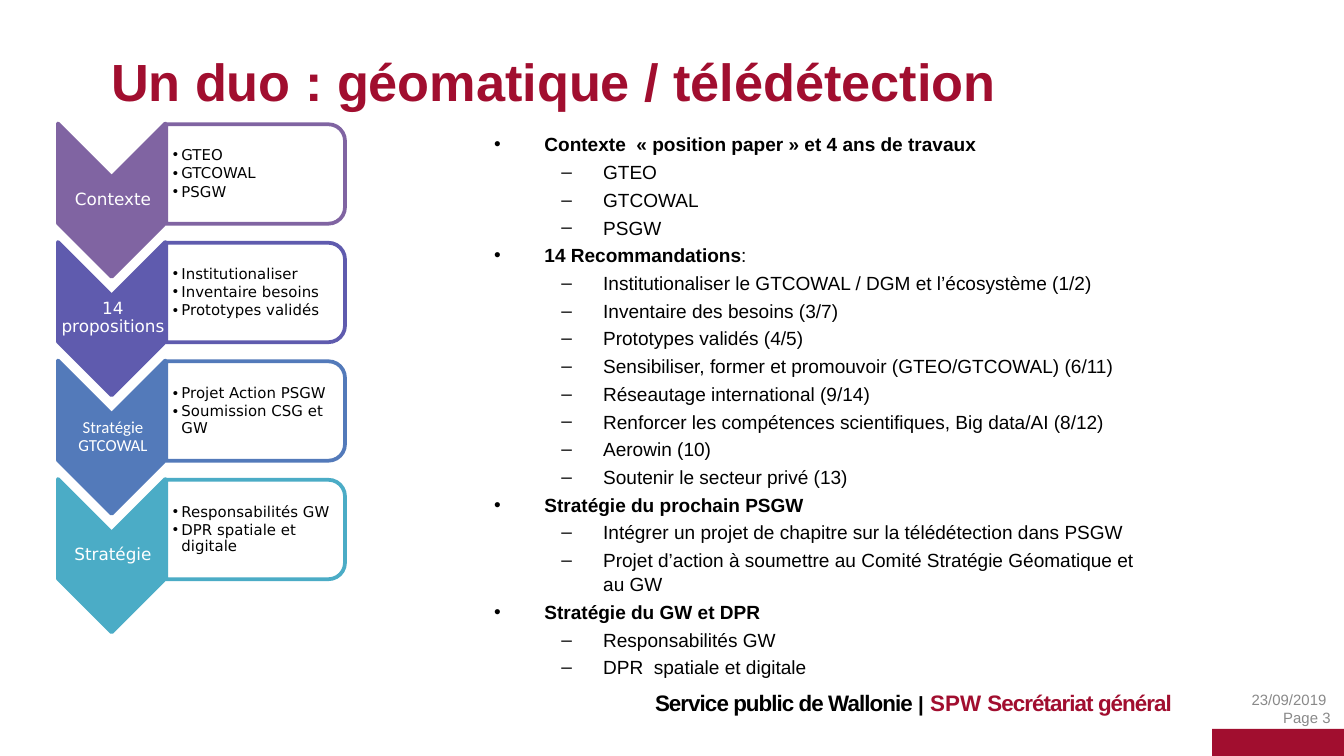
from lxml import etree
from pptx import Presentation
from pptx.dml.color import RGBColor
from pptx.enum.shapes import MSO_SHAPE
from pptx.enum.text import MSO_ANCHOR, PP_ALIGN
from pptx.oxml.ns import qn
from pptx.util import Cm, Pt

CHEVRON = MSO_SHAPE.CHEVRON
ROUND_TOP = MSO_SHAPE.ROUND_2_SAME_RECTANGLE
RECT = MSO_SHAPE.RECTANGLE
TOP, MIDDLE = MSO_ANCHOR.TOP, MSO_ANCHOR.MIDDLE
LEFT, CENTER, RIGHT = PP_ALIGN.LEFT, PP_ALIGN.CENTER, PP_ALIGN.RIGHT

COLORS = {
    "red": "A10E2F",
    "black": "000000",
    "white": "FFFFFF",
    "grey": "898989",
    "purple": "8064A2",
    "indigo": "5F5BAE",
    "blue": "537ABA",
    "teal": "4BACC6",
}

STEP_PITCH = 2.24
STEPS = [
    ("Contexte", "DejaVu Sans", "purple", ["GTEO", "GTCOWAL", "PSGW"]),
    ("14 propositions", "DejaVu Sans", "indigo",
     ["Institutionaliser", "Inventaire besoins", "Prototypes validés"]),
    ("Stratégie GTCOWAL", "Calibri", "blue",
     ["Projet Action PSGW", "Soumission CSG et GW"]),
    ("Stratégie", "DejaVu Sans", "teal",
     ["Responsabilités GW", "DPR spatiale et digitale"]),
]

OUTLINE = [
    ("Contexte  « position paper » et 4 ans de travaux", "",
     ["GTEO", "GTCOWAL", "PSGW"]),
    ("14 Recommandations", ":",
     ["Institutionaliser le GTCOWAL / DGM et l’écosystème (1/2)",
      "Inventaire des besoins (3/7)",
      "Prototypes validés (4/5)",
      "Sensibiliser, former et promouvoir (GTEO/GTCOWAL) (6/11)",
      "Réseautage international (9/14)",
      "Renforcer les compétences scientifiques, Big data/AI (8/12)",
      "Aerowin (10)",
      "Soutenir le secteur privé (13)"]),
    ("Stratégie du prochain PSGW", "",
     ["Intégrer un projet de chapitre sur la télédétection dans PSGW",
      "Projet d’action à soumettre au Comité Stratégie Géomatique et au GW"]),
    ("Stratégie du GW et DPR", "",
     ["Responsabilités GW", "DPR  spatiale et digitale"]),
]

FOOTER = [
    ("Service public de Wallonie ", 12, "black", -50),
    ("|", 11, "black", 0),
    (" ", 12, "black", 0),
    ("SPW ", 12, "red", 0),
    ("Secrétariat général", 12, "red", -50),
]


def rgb(name):
    return RGBColor.from_string(COLORS[name])


def add_box(s, x, y, w, h, anchor=TOP, insets=(0.25, 0.13, 0.25, 0.13)):
    tf = s.shapes.add_textbox(Cm(x), Cm(y), Cm(w), Cm(h)).text_frame
    tf.word_wrap = True
    tf.vertical_anchor = anchor
    tf.margin_left, tf.margin_top, tf.margin_right, tf.margin_bottom = map(Cm, insets)
    return tf


def add_paragraph(tf, align=LEFT, spacing=1.0, before=0, after=0):
    first = tf.paragraphs[0]
    is_first = not first.runs
    p = first if is_first else tf.add_paragraph()
    p.alignment = align
    p.line_spacing = spacing
    p.space_before = Pt(0 if is_first else before)
    p.space_after = Pt(after)
    return p


def add_bullet(p, char, indent, hang):
    pPr = p._p.get_or_add_pPr()
    pPr.set("marL", str(Cm(indent)))
    pPr.set("indent", str(-Cm(hang)))
    font = etree.SubElement(pPr, qn("a:buFont"))
    font.set("typeface", "Arial")
    etree.SubElement(pPr, qn("a:buChar")).set("char", char)


def add_run(p, text, size, color, font="Arial", bold=False, tracking=0):
    r = p.add_run()
    r.text = text
    r.font.size = Pt(size)
    r.font.name = font
    r.font.bold = bold
    r.font.color.rgb = rgb(color)
    if tracking:
        r._r.get_or_add_rPr().set("spc", str(tracking))


def add_shape(s, kind, x, y, w, h, fill, line=None, rotation=0):
    sp = s.shapes.add_shape(kind, Cm(x), Cm(y), Cm(w), Cm(h))
    sp.shadow.inherit = False
    sp.rotation = rotation
    sp.fill.solid()
    sp.fill.fore_color.rgb = rgb(fill)
    if line:
        sp.line.color.rgb = rgb(line)
        sp.line.width = Pt(2)
    else:
        sp.line.fill.background()


def add_step(s, dy, label, font, color, items):
    add_shape(s, CHEVRON, 0.66, 2.77 + dy, 2.9, 2.03, color, color, 90)
    tf = add_box(s, 1.12, 3.35 + dy, 2.03, 0.86, MIDDLE, (0.02,) * 4)
    add_run(add_paragraph(tf, CENTER, 0.9), label, 9, "white", font)
    add_shape(s, ROUND_TOP, 3.89, 1.6 + dy, 1.88, 3.38, "white", color, 90)
    tf = add_box(s, 3.12, 2.44 + dy, 3.28, 1.7, MIDDLE, (0.15, 0.02, 0.02, 0.02))
    for item in items:
        p = add_paragraph(tf, spacing=0.9, after=1.2)
        add_bullet(p, "•", 0.16, 0.16)
        add_run(p, item, 8, "black", "DejaVu Sans")


def add_outline(s):
    tf = add_box(s, 9.09, 2.36, 12.75, 9.75)
    for heading, suffix, items in OUTLINE:
        p = add_paragraph(tf, spacing=1.05, before=2)
        add_bullet(p, "•", 0.95, 0.95)
        add_run(p, heading, 10.2, "black", bold=True)
        if suffix:
            add_run(p, suffix, 10.2, "black")
        for item in items:
            p = add_paragraph(tf, spacing=1.05, before=2)
            p.level = 1
            add_bullet(p, "–", 2.06, 0.79)
            add_run(p, item, 10.2, "black")


def add_footer(s):
    tf = add_box(s, 22.91, 12.92, 2.49, 1.07)
    for text in ("23/09/2019 ", "Page 3"):
        add_run(add_paragraph(tf, RIGHT), text, 8, "grey")
    add_shape(s, RECT, 22.91, 13.78, 2.49, 0.51, "red")
    p = add_paragraph(add_box(s, 0, 12.9, 22.4, 0.76, MIDDLE), RIGHT)
    for text, size, color, tracking in FOOTER:
        add_run(p, text, size, color, bold=True, tracking=tracking)


def main():
    prs = Presentation()
    prs.slide_width, prs.slide_height = Cm(25.4), Cm(14.29)
    s = prs.slides.add_slide(prs.slide_layouts[6])
    add_footer(s)
    title = add_paragraph(add_box(s, 1.85, 0.33, 21.84, 2.39, MIDDLE))
    add_run(title, "Un duo : géomatique / télédétection", 28, "red", bold=True)
    add_outline(s)
    for i, step in enumerate(STEPS):
        add_step(s, i * STEP_PITCH, *step)
    prs.save("out.pptx")


if __name__ == "__main__":
    main()
